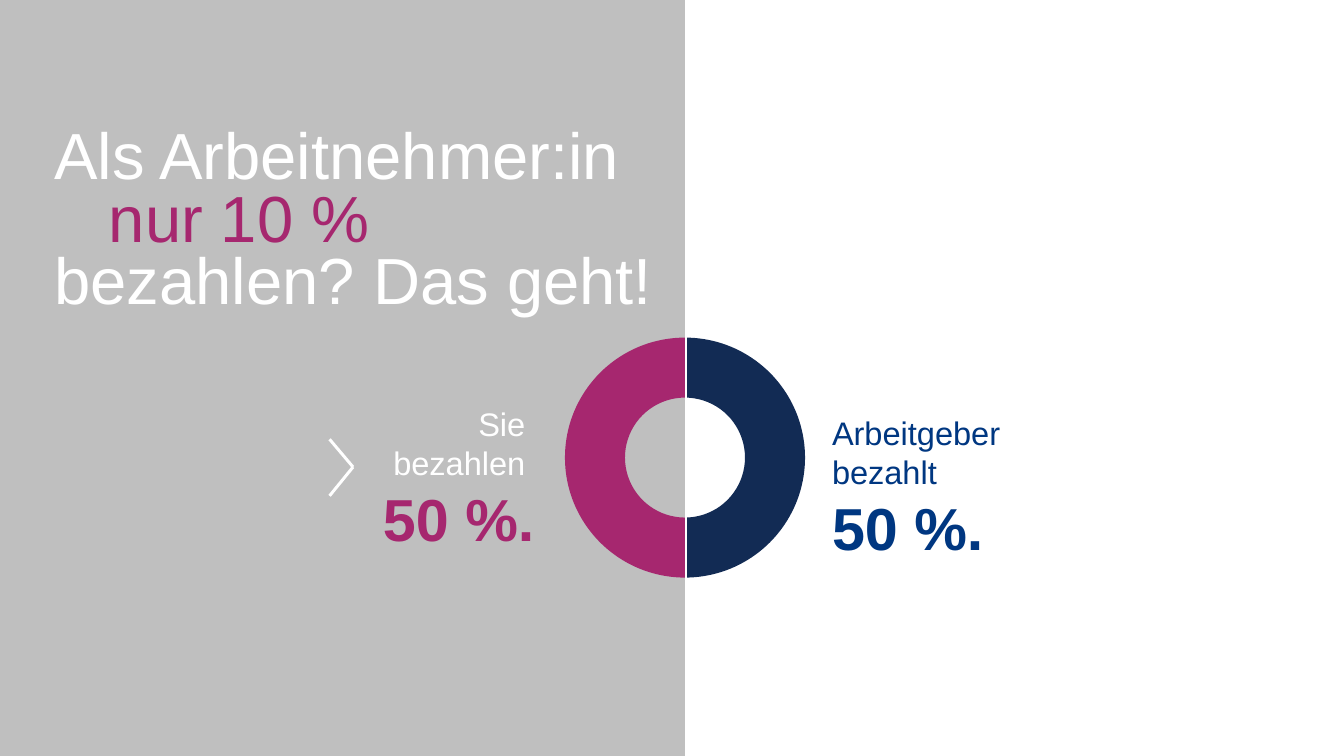
"""Build the slide on how employee and employer share the cost."""
from dataclasses import dataclass

from lxml import etree
from pptx import Presentation
from pptx import util as u
from pptx.chart.data import CategoryChartData
from pptx.dml.color import RGBColor
from pptx.enum import chart as charts, shapes, text
from pptx.oxml import ns

PX = 9144
FONT = "Arial"
HUES = {"white": "FFFFFF", "grey": "BFBFBF", "pink": "A6276F",
        "navy": "122B54", "blue": "003781"}


@dataclass
class Run:
    words: str
    size: int
    hue: str
    bold: bool = False


@dataclass
class Label:
    box: tuple[int, int, int, int]
    lines: list[Run]
    align: text.PP_ALIGN


@dataclass
class Line:
    start: tuple[int, int]
    end: tuple[int, int]
    width: int


TITLE = [[Run("Als Arbeitnehmer:in", 44, "white")],
         [Run("nur 10 % ", 44, "pink"),
          Run("bezahlen? Das geht!", 44, "white")]]
LABELS = [
    Label((303, 379, 198, 98),
          [Run("Sie ", 22, "white"), Run("bezahlen ", 22, "white"),
           Run("50 %.", 40, "pink", True)], text.PP_ALIGN.RIGHT),
    Label((780, 387, 198, 98),
          [Run("Arbeitgeber ", 22, "blue"), Run("bezahlt ", 22, "blue"),
           Run("50 %.", 40, "blue", True)], text.PP_ALIGN.LEFT),
]
LINES = [Line((309, 412), (331, 438), 2),
         Line((331, 438), (309, 465), 2),
         Line((643, 0), (643, 709), 1)]
SHARES = {"1": (50, "navy"), "2": (50, "pink")}


def px(*vals: int) -> list[u.Emu]:
    """Turn px into EMU."""
    return [u.Emu(val * PX) for val in vals]


def tint(name: str) -> RGBColor:
    """Look up a colour."""
    return RGBColor.from_string(HUES[name])


def style(item, **form) -> None:
    """Set attributes from format values."""
    for key, val in form.items():
        setattr(item, key, val)


def paint(fill, hue: str) -> None:
    """Apply a solid fill."""
    fill.solid()
    fill.fore_color.rgb = tint(hue)


def write(para, run: Run) -> None:
    """Add a formatted run to a paragraph."""
    part = para.add_run()
    part.text = run.words
    style(part.font, name=FONT, size=u.Pt(run.size), bold=run.bold)
    part.font.color.rgb = tint(run.hue)


def setup(frame, anchor) -> None:
    """Give a text frame wrapping and no margins."""
    style(frame, word_wrap=True, auto_size=text.MSO_AUTO_SIZE.NONE,
          vertical_anchor=anchor, margin_left=0, margin_right=0,
          margin_top=0, margin_bottom=0)


def add_panel(slide) -> None:
    """Put the grey half behind everything."""
    panel = slide.shapes.add_shape(shapes.MSO_SHAPE.RECTANGLE,
                                   *px(0, 0, 644, 709))
    panel.shadow.inherit = False
    paint(panel.fill, "grey")
    panel.line.fill.background()
    slide.shapes._spTree.insert(2, panel._element)


def add_title(slide) -> None:
    """Fill the title, indenting its second paragraph."""
    title = slide.shapes.title
    left, top, width, height = px(51, 117, 565, 185)
    style(title, left=left, top=top, width=width, height=height)
    frame = title.text_frame
    setup(frame, text.MSO_ANCHOR.MIDDLE)
    for pos, runs in enumerate(TITLE):
        para = frame.add_paragraph() if pos else frame.paragraphs[0]
        style(para, alignment=text.PP_ALIGN.LEFT, line_spacing=0.8,
              space_before=u.Pt(0))
        props = para._p.get_or_add_pPr()
        props.set("marL", "0")
        props.set("indent", str(pos * 51 * PX))
        for run in runs:
            write(para, run)


def add_ring(slide) -> None:
    """Add the doughnut of shares."""
    data = CategoryChartData()
    data.categories = list(SHARES)
    data.add_series("Series 1", [val for val, _ in SHARES.values()])
    ring = slide.shapes.add_chart(charts.XL_CHART_TYPE.DOUGHNUT,
                                  *px(517, 304, 253, 253), data).chart
    style(ring, has_legend=False, has_title=False)
    style(ring.font, name=FONT, size=u.Pt(10))
    ring.font.color.rgb = tint("white")
    plot = ring.plots[0]
    style(plot, vary_by_categories=True, has_data_labels=False)
    for pos, (_, hue) in enumerate(SHARES.values()):
        form = plot.series[0].points[pos].format
        paint(form.fill, hue)
        form.line.fill.background()
    plot._element.find(ns.qn("c:holeSize")).set("val", "50")
    area = ring._chartSpace.chart.plotArea
    for old in area.findall(ns.qn("c:layout")):
        area.remove(old)
    layout = etree.Element(ns.qn("c:layout"))
    area.insert(0, layout)
    manual = etree.SubElement(layout, ns.qn("c:manualLayout"))
    for key, val in {"layoutTarget": "inner", "xMode": "edge",
                     "yMode": "edge", "x": "0.05", "y": "0.05",
                     "w": "0.89", "h": "0.89"}.items():
        etree.SubElement(manual, ns.qn(f"c:{key}")).set("val", val)


def add_label(slide, label: Label) -> None:
    """Add one side's label."""
    frame = slide.shapes.add_textbox(*px(*label.box)).text_frame
    setup(frame, text.MSO_ANCHOR.TOP)
    para = frame.paragraphs[0]
    para.alignment = label.align
    for pos, run in enumerate(label.lines):
        if pos:
            para.add_line_break()
        write(para, run)


def add_line(slide, line: Line) -> None:
    """Draw one white line."""
    link = slide.shapes.add_connector(shapes.MSO_CONNECTOR.STRAIGHT,
                                      *px(*line.start, *line.end))
    link.line.width = u.Pt(line.width)
    link.line.color.rgb = tint("white")
    etree.SubElement(link._element.spPr, ns.qn("a:effectLst"))


def main() -> None:
    """Build and save the slide."""
    deck = Presentation()
    wide, high = px(1260, 709)
    style(deck, slide_width=wide, slide_height=high)
    slide = deck.slides.add_slide(deck.slide_layouts[5])
    add_panel(slide)
    add_title(slide)
    add_ring(slide)
    for label in LABELS:
        add_label(slide, label)
    for line in LINES:
        add_line(slide, line)
    deck.save("out.pptx")


if __name__ == "__main__":
    main()
